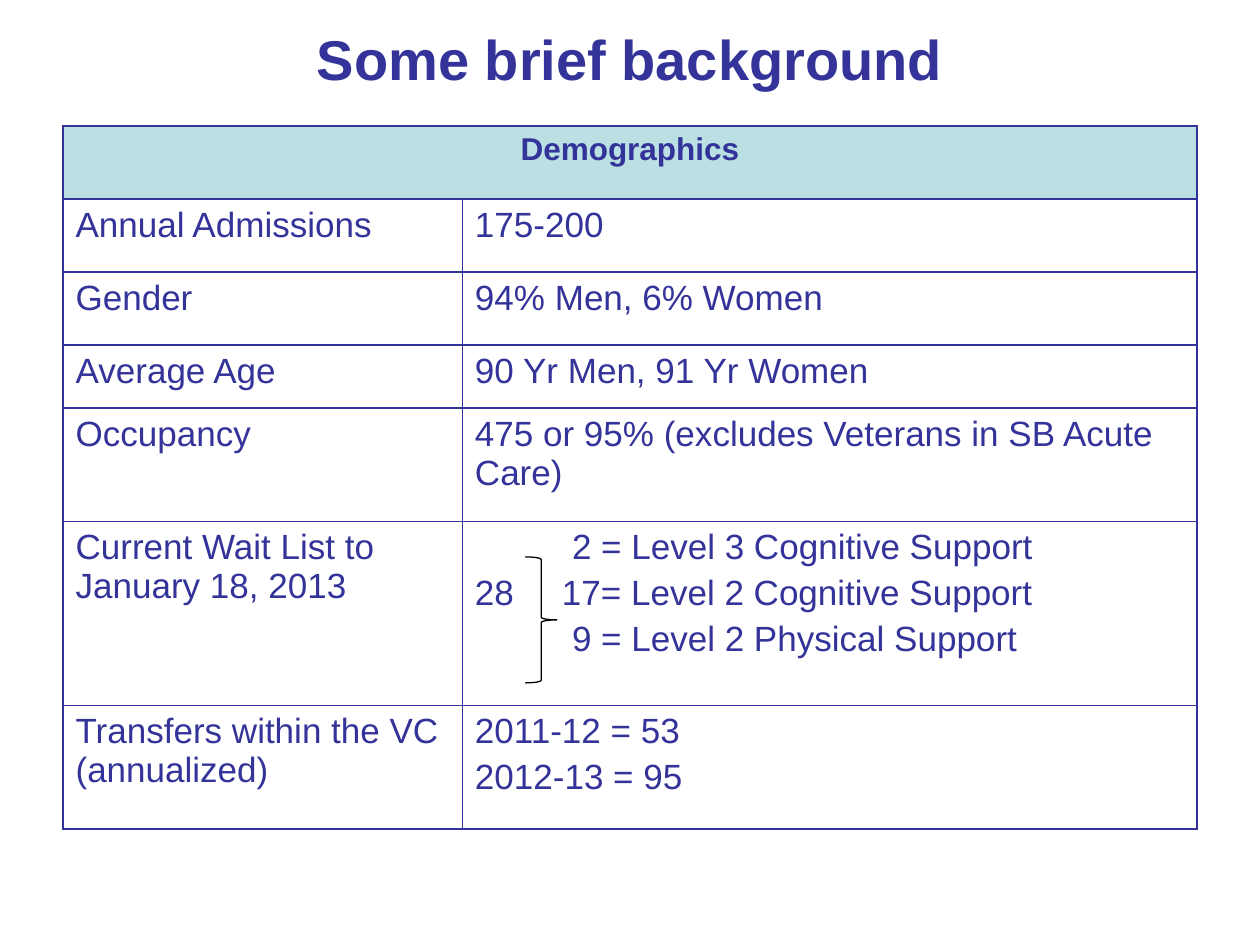
"""Build the demographics background slide."""
from lxml import etree
from pptx import Presentation
from pptx import util as u
from pptx.dml.color import RGBColor
from pptx.enum import shapes, text
from pptx.oxml import parse_xml
from pptx.oxml.ns import nsdecls, qn

HUES = {"ink": "333399", "head": "BBE0E3", "brace": "000000"}
WIDTHS = [3.17, 5.83]
HEIGHTS = [0.58, 0.58, 0.58, 0.5, 0.9, 1.46, 0.98]
ROWS = [
    (["Annual Admissions"], ["175-200"]),
    (["Gender"], ["94% Men, 6% Women"]),
    (["Average Age"], ["90 Yr Men, 91 Yr Women"]),
    (["Occupancy"], ["475 or 95% (excludes Veterans in SB Acute Care)"]),
    (["Current Wait List to January 18, 2013"],
     ["2 = Level 3 Cognitive Support",
      "28\t17= Level 2 Cognitive Support",
      "9 = Level 2 Physical Support"]),
    (["Transfers within the VC (annualized)"],
     ["2011-12 = 53", "2012-13 = 95"]),
]
WAIT = ROWS[4][1]
INDENT, TAB = u.Inches(0.77), u.Inches(0.69)


def write(par, words, size, bold=False):
    run = par.add_run()
    run.text = words
    run.font.name = "Arial"
    run.font.size = u.Pt(size)
    run.font.bold = bold
    run.font.color.rgb = RGBColor.from_string(HUES["ink"])


def edge(cell):
    props = cell._tc.get_or_add_tcPr()
    for spot, side in enumerate(("lnL", "lnR", "lnT", "lnB")):
        props.insert(spot, parse_xml(
            f'<a:{side} {nsdecls("a")} w="{u.Pt(1)}"><a:solidFill>'
            f'<a:srgbClr val="{HUES["ink"]}"/></a:solidFill></a:{side}>'))


deck = Presentation()
deck.slide_width, deck.slide_height = u.Inches(10), u.Inches(7.5)
slide = deck.slides.add_slide(deck.slide_layouts[6])

title = slide.shapes.add_textbox(
    u.Inches(0.75), u.Inches(0), u.Inches(8.5), u.Inches(0.92)).text_frame
title.word_wrap = True
title.vertical_anchor = text.MSO_ANCHOR.MIDDLE
title.paragraphs[0].alignment = text.PP_ALIGN.CENTER
write(title.paragraphs[0], "Some brief background", 32, True)

grid = slide.shapes.add_table(
    len(HEIGHTS), len(WIDTHS), u.Inches(0.5), u.Inches(1),
    u.Inches(sum(WIDTHS)), u.Inches(sum(HEIGHTS))).table
for col, width in zip(grid.columns, WIDTHS):
    col.width = u.Inches(width)
for row, height in zip(grid.rows, HEIGHTS):
    row.height = u.Inches(height)
for cell in grid.iter_cells():
    cell.fill.background()
    edge(cell)

head = grid.cell(0, 0)
head.merge(grid.cell(0, 1))
head.fill.solid()
head.fill.fore_color.rgb = RGBColor.from_string(HUES["head"])
first = head.text_frame.paragraphs[0]
first.alignment = text.PP_ALIGN.CENTER
write(first, "Demographics", 18, True)

for r, row in enumerate(ROWS, 1):
    for c, lines in enumerate(row):
        frame = grid.cell(r, c).text_frame
        for n, line in enumerate(lines):
            par = frame.add_paragraph() if n else frame.paragraphs[0]
            if n:
                par.space_before = u.Pt(4)
            props = par._p.get_or_add_pPr()
            if "\t" in line:
                stops = etree.SubElement(props, qn("a:tabLst"))
                etree.SubElement(stops, qn("a:tab"), pos=str(TAB), algn="l")
            elif lines is WAIT:
                props.set("marL", str(INDENT))
                props.set("indent", "0")
            write(par, line, 20)

brace = slide.shapes.add_shape(
    shapes.MSO_SHAPE.RIGHT_BRACE,
    u.Inches(4.17), u.Inches(4.42), u.Inches(0.25), u.Inches(1))
brace.shadow.inherit = False
brace.fill.background()
brace.line.color.rgb = RGBColor.from_string(HUES["brace"])
brace.line.width = u.Pt(0.75)

deck.save("out.pptx")
